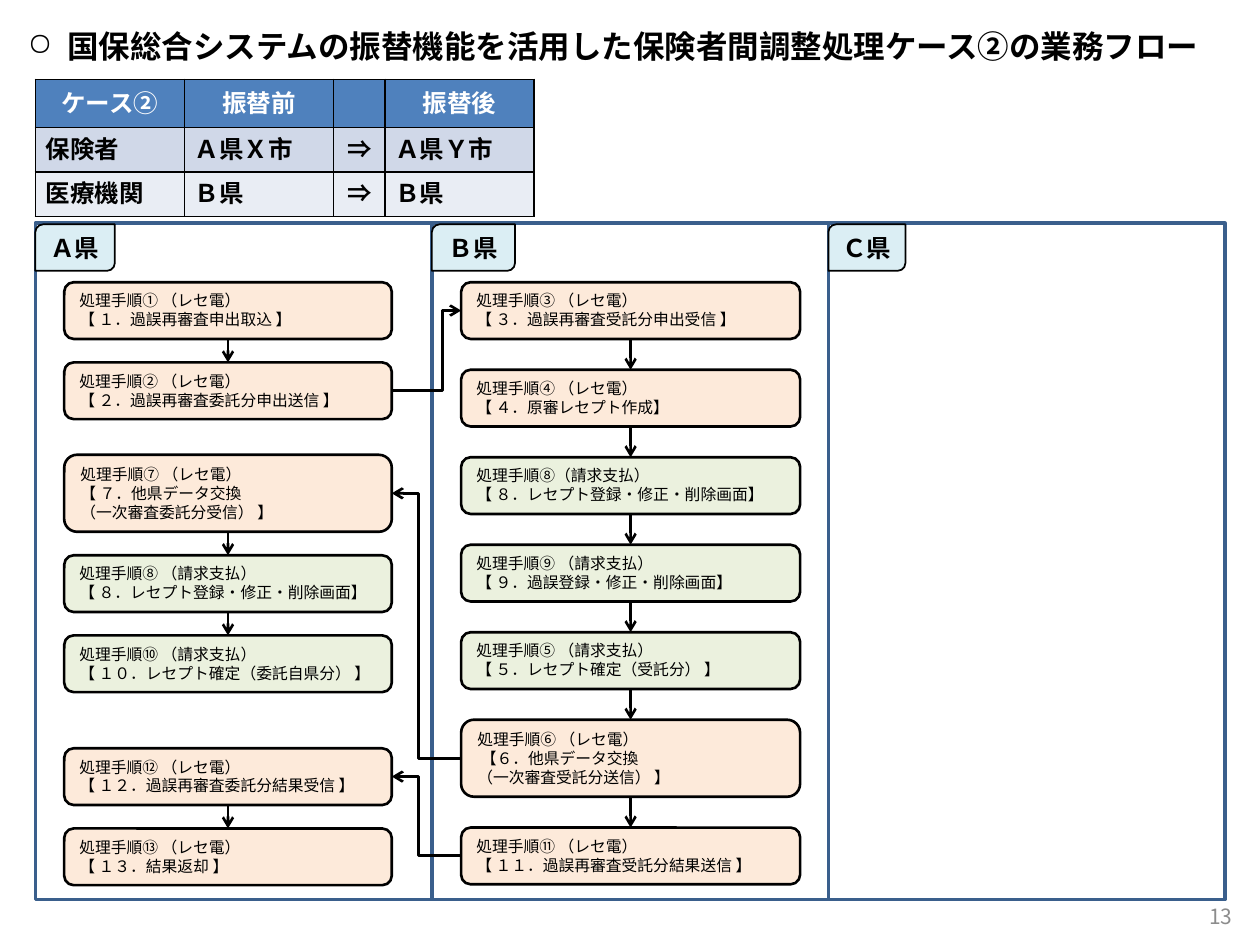
from typing import NamedTuple

from lxml.etree import SubElement
from pptx import Presentation
from pptx.dml.color import RGBColor
from pptx.enum.shapes import MSO_CONNECTOR, MSO_SHAPE
from pptx.enum.text import MSO_ANCHOR, MSO_AUTO_SIZE, PP_ALIGN
from pptx.oxml.ns import qn
from pptx.util import Pt

FONT = "Noto Sans CJK JP"
COLORS = {
    "black": "000000", "white": "FFFFFF", "gray": "8C8C8C",
    "frame": "3A5F8C", "label": "DBEEF4",
    "receipt": "FDEADA", "payment": "EBF1DE",
    "header": "4F81BD", "band": "D0D8E8", "light": "E9EDF4",
}
TOP, LEFT, BOTTOM, RIGHT = range(4)
LINE_HEIGHTS = {2: 32.4, 3: 44}


class Prefecture(NamedTuple):
    name: str
    label_width: float
    label_inset: float


class Step(NamedTuple):
    system: str
    lines: list[str]


class Stack(NamedTuple):
    """Steps that follow one another downwards with equal gaps."""
    left: float
    top: float
    width: float
    gap: float
    steps: list[Step]


class Handover(NamedTuple):
    """An elbow arrow between steps, given as (stack, step) indices."""
    source: tuple[int, int]
    target: tuple[int, int]
    bend: int


PREFECTURES = [Prefecture("Ａ県", 45.4, 7.2), Prefecture("Ｂ県", 47.5, 7.2),
               Prefecture("Ｃ県", 44, 2.9)]

STACKS = [
    Stack(36.7, 161.3, 187.2, 13.4, [
        Step("receipt", ["処理手順① （レセ電）", "【 １．過誤再審査申出取込 】"]),
        Step("receipt", ["処理手順② （レセ電）", "【 ２．過誤再審査委託分申出送信 】"]),
    ]),
    Stack(36.7, 259.9, 187.2, 13.4, [
        Step("receipt", ["処理手順⑦ （レセ電）", "【 ７．他県データ交換", "（一次審査委託分受信） 】"]),
        Step("payment", ["処理手順⑧ （請求支払）", "【 ８．レセプト登録・修正・削除画面】"]),
        Step("payment", ["処理手順⑩ （請求支払）", "【 １０．レセプト確定（委託自県分） 】"]),
    ]),
    Stack(36.7, 427.6, 187.2, 13.4, [
        Step("receipt", ["処理手順⑫ （レセ電）", "【 １２．過誤再審査委託分結果受信 】"]),
        Step("receipt", ["処理手順⑬ （レセ電）", "【 １３．結果返却 】"]),
    ]),
    Stack(263.5, 161.3, 193.7, 17.6, [
        Step("receipt", ["処理手順③ （レセ電）", "【 ３．過誤再審査受託分申出受信 】"]),
        Step("receipt", ["処理手順④ （レセ電）", "【 ４．原審レセプト作成】"]),
        Step("payment", ["処理手順⑧（請求支払）", "【 ８．レセプト登録・修正・削除画面】"]),
        Step("payment", ["処理手順⑨ （請求支払）", "【 ９．過誤登録・修正・削除画面】"]),
        Step("payment", ["処理手順⑤ （請求支払）", "【 ５．レセプト確定（受託分） 】"]),
        Step("receipt", ["処理手順⑥ （レセ電）", " 【６．他県データ交換", "（一次審査受託分送信） 】"]),
        Step("receipt", ["処理手順⑪ （レセ電）", "【 １１．過誤再審査受託分結果送信 】"]),
    ]),
]

HANDOVERS = [Handover((0, 1), (3, 0), 73500), Handover((3, 5), (1, 0), 61800),
             Handover((3, 6), (2, 0), 61800)]

CASE_ROWS = [["ケース②", "振替前", "", "振替後"],
             ["保険者", "Ａ県Ｘ市", "⇒", "Ａ県Ｙ市"],
             ["医療機関", "Ｂ県", "⇒", "Ｂ県"]]


def rgb(name: str) -> RGBColor:
    return RGBColor.from_string(COLORS[name])


def write(frame, lines: list[str], size: float, color: str = "black", bold: bool = False,
          align=PP_ALIGN.LEFT, spacing: float | None = None) -> None:
    for number, line in enumerate(lines):
        paragraph = frame.add_paragraph() if number else frame.paragraphs[0]
        paragraph.alignment = align
        if spacing:
            paragraph.line_spacing = Pt(spacing)
        run = paragraph.add_run()
        run.text = line
        for attribute, value in {"size": Pt(size), "bold": bold, "name": FONT}.items():
            setattr(run.font, attribute, value)
        run.font.color.rgb = rgb(color)
        SubElement(run.font._element, qn("a:ea"), typeface=FONT)


def add_box(shapes, preset, left: float, top: float, width: float, height: float,
            fill: str | None, line: str, weight: float):
    box = shapes.add_shape(preset, Pt(left), Pt(top), Pt(width), Pt(height))
    box.shadow.inherit = False
    if fill:
        box.fill.solid()
        box.fill.fore_color.rgb = rgb(fill)
    else:
        box.fill.background()
    box.line.color.rgb = rgb(line)
    box.line.width = Pt(weight)
    settings = {"vertical_anchor": MSO_ANCHOR.TOP, "word_wrap": True,
                "auto_size": MSO_AUTO_SIZE.SHAPE_TO_FIT_TEXT if fill else MSO_AUTO_SIZE.NONE}
    for attribute, value in settings.items():
        setattr(box.text_frame, attribute, value)
    return box


def add_arrow(shapes, kind, source, source_side: int, target, target_side: int):
    arrow = shapes.add_connector(kind, 0, 0, 0, 0)
    arrow.begin_connect(source, source_side)
    arrow.end_connect(target, target_side)
    arrow.line.color.rgb = rgb("black")
    arrow.line.width = Pt(1.5)
    SubElement(arrow.line._get_or_add_ln(), qn("a:tailEnd"), type="arrow")
    SubElement(arrow._element.spPr, qn("a:effectLst"))
    return arrow


def add_stack(shapes, stack: Stack) -> list:
    boxes, top = [], stack.top
    for step in stack.steps:
        height = LINE_HEIGHTS[len(step.lines)]
        box = add_box(shapes, MSO_SHAPE.ROUNDED_RECTANGLE, stack.left, top, stack.width,
                      height, step.system, "black", 1.5)
        write(box.text_frame, step.lines, 9)
        if boxes:
            add_arrow(shapes, MSO_CONNECTOR.STRAIGHT, boxes[-1], BOTTOM, box, TOP)
        boxes.append(box)
        top += height + stack.gap
    return boxes


def add_handover(shapes, handover: Handover, stacks: list) -> None:
    source, target = (stacks[stack][step] for stack, step in (handover.source, handover.target))
    sides = (RIGHT, LEFT) if source.left < target.left else (LEFT, RIGHT)
    arrow = add_arrow(shapes, MSO_CONNECTOR.ELBOW, source, sides[0], target, sides[1])
    guides = arrow._element.spPr.find(qn("a:prstGeom")).get_or_add_avLst()
    SubElement(guides, qn("a:gd"), name="adj1", fmla=f"val {handover.bend}")


def add_case_table(shapes) -> None:
    table = shapes.add_table(3, 4, Pt(20.2), Pt(45.4), Pt(285), Pt(76.5)).table
    for column, width in zip(table.columns, (85.2, 85.2, 29.5, 85.1)):
        column.width = Pt(width)
    for row, (texts, fill) in enumerate(zip(CASE_ROWS, ("header", "band", "light"))):
        table.rows[row].height = Pt(25.5)
        for column, text in enumerate(texts):
            cell = table.cell(row, column)
            margins = {"margin_left": 5.8, "margin_right": 5.8,
                       "margin_top": 2.9, "margin_bottom": 2.9}
            for attribute, value in margins.items():
                setattr(cell, attribute, Pt(value))
            cell.vertical_anchor = MSO_ANCHOR.MIDDLE
            properties = cell._tc.get_or_add_tcPr()
            for side in ("lnL", "lnR", "lnT", "lnB"):
                border = SubElement(properties, qn(f"a:{side}"), w=str(Pt(1)))
                solid = SubElement(border, qn("a:solidFill"))
                SubElement(solid, qn("a:srgbClr"), val=COLORS["black"])
            cell.fill.solid()
            cell.fill.fore_color.rgb = rgb(fill)
            if text:
                centred = row == 0 or column == 2
                write(cell.text_frame, [text], 14, "black" if row else "white", True,
                      PP_ALIGN.CENTER if centred else PP_ALIGN.LEFT, 18)


def place_title(title) -> None:
    bounds = {"left": 8.6, "top": 9.4, "width": 702.7, "height": 33.8}
    for attribute, value in bounds.items():
        setattr(title, attribute, Pt(value))
    title.text_frame.vertical_anchor = MSO_ANCHOR.MIDDLE
    title.text_frame.auto_size = MSO_AUTO_SIZE.NONE
    write(title.text_frame, ["国保総合システムの振替機能を活用した保険者間調整処理ケース②の業務フロー"],
          18, bold=True)
    properties = title.text_frame.paragraphs[0]._p.get_or_add_pPr()
    properties.set("marL", str(Pt(22.5)))
    properties.set("indent", str(-Pt(22.5)))
    SubElement(properties, qn("a:buChar"), char="○")


def main() -> None:
    deck = Presentation()
    deck.slide_width, deck.slide_height = Pt(720), Pt(540)
    slide = deck.slides.add_slide(deck.slide_layouts[5])
    shapes = slide.shapes
    place_title(shapes.title)

    column_width = 226.6
    lefts = [20.2 + column_width * number for number in range(len(PREFECTURES))]
    for left in lefts:
        add_box(shapes, MSO_SHAPE.RECTANGLE, left, 127.5, column_width, 386.6, None, "frame", 2)
    for left, prefecture in zip(lefts, PREFECTURES):
        label = add_box(shapes, MSO_SHAPE.ROUND_2_DIAG_RECTANGLE, left, 128.2,
                        prefecture.label_width, 26.6, "label", "black", 1)
        label.text_frame.margin_left = label.text_frame.margin_right = Pt(prefecture.label_inset)
        write(label.text_frame, [prefecture.name], 14, bold=True, align=PP_ALIGN.CENTER)

    add_case_table(shapes)
    stacks = [add_stack(shapes, stack) for stack in STACKS]
    for handover in HANDOVERS:
        add_handover(shapes, handover, stacks)

    page_number = shapes.add_textbox(Pt(543.6), Pt(509), Pt(167.8), Pt(28.8)).text_frame
    page_number.word_wrap = True
    page_number.vertical_anchor = MSO_ANCHOR.MIDDLE
    write(page_number, ["13"], 12, "gray", align=PP_ALIGN.RIGHT)
    deck.save("out.pptx")


if __name__ == "__main__":
    main()
